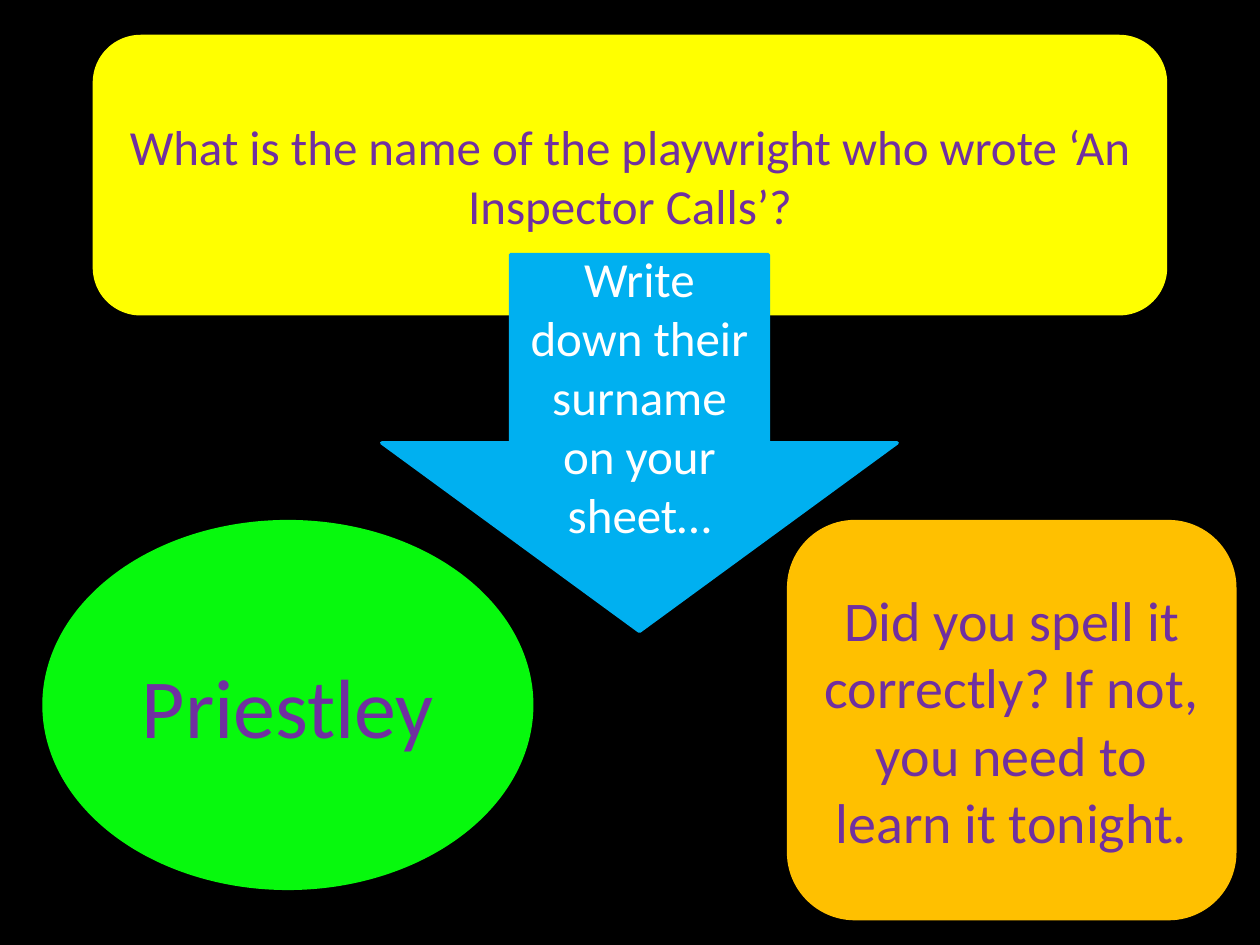
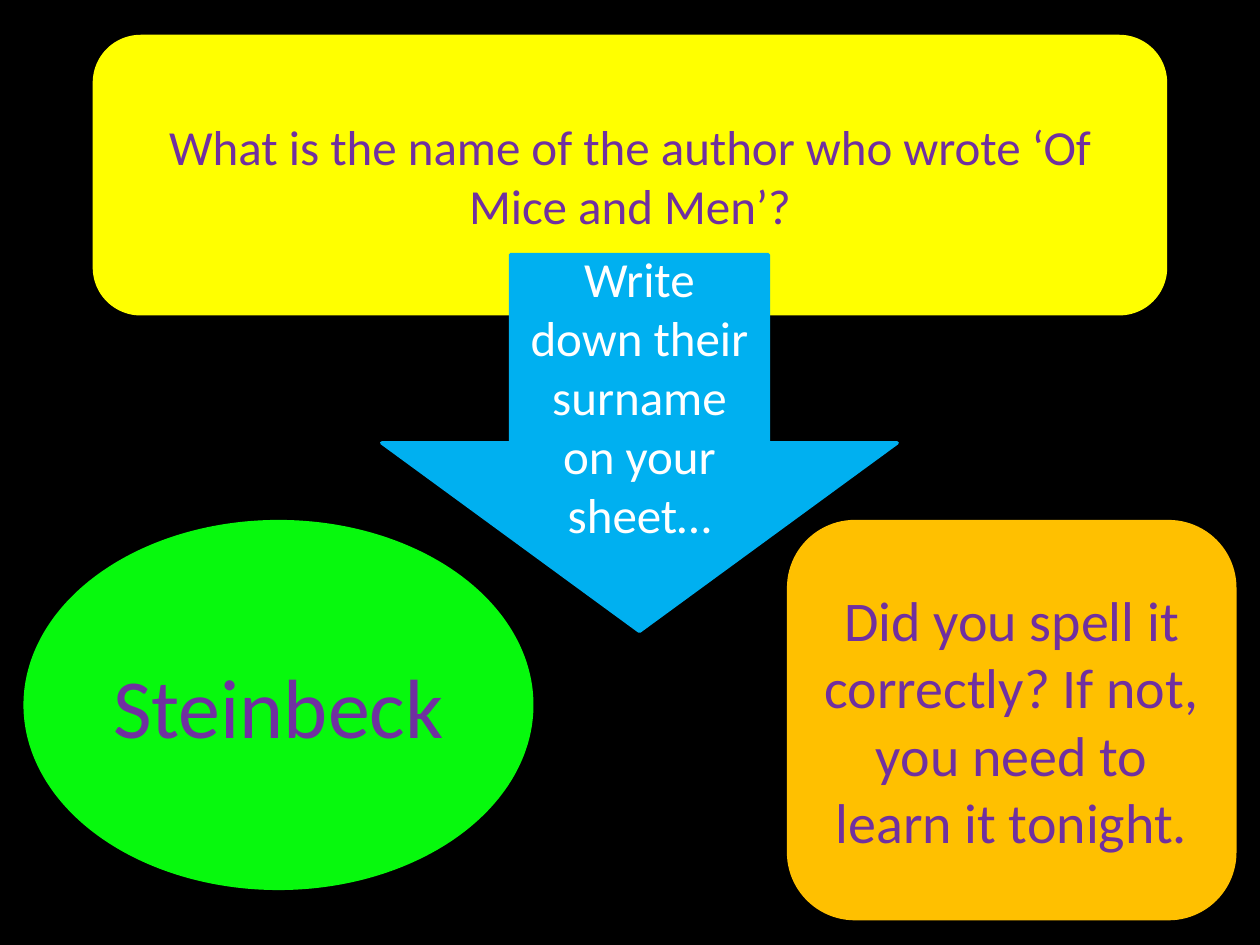
"""Build two author-surname quiz slides with a shared layout."""
from dataclasses import dataclass

from pptx import Presentation
from pptx import util as u
from pptx.dml.color import RGBColor
from pptx.enum import shapes, text

QUIZ = [
    {"question": "What is the name of the playwright who wrote ‘An Inspector Calls’?",
     "answer": "Priestley", "answer_left": 0.35},
    {"question": "What is the name of the author who wrote ‘Of Mice and Men’?",
     "answer": "Steinbeck", "answer_left": 0.2},
]
INSTRUCTION = "Write down their surname on your sheet…"
REMINDER = "Did you spell it correctly? If not, you need to learn it tonight."


@dataclass(frozen=True)
class Theme:
    font: str = "Calibri"
    background: str = "000000"
    question: str = "FFFF00"
    arrow: str = "00B0F0"
    answer: str = "07F90D"
    reminder: str = "FFC000"
    ink: str = "7030A0"
    light_ink: str = "FFFFFF"
    body_size: int = 28
    reminder_size: int = 32
    answer_size: int = 48
    outline: int = 2


THEME = Theme()
SHAPE = shapes.MSO_SHAPE
SLIDE_W, SLIDE_H = 10, 7.5
QUESTION_W = 8.5
LOWER_TOP = 4.14
ANSWER_RIGHT = 4.22


def add_panel(s, kind, box, color, words, size, ink=THEME.ink):
    sp = s.shapes.add_shape(kind, *(u.Inches(v) for v in box))
    sp.shadow.inherit = False
    sp.fill.solid()
    sp.fill.fore_color.rgb = RGBColor.from_string(color)
    sp.line.color.rgb = RGBColor.from_string(color)
    sp.line.width = u.Pt(THEME.outline)
    tf = sp.text_frame
    tf.word_wrap = True
    tf.vertical_anchor = text.MSO_ANCHOR.MIDDLE
    p = tf.paragraphs[0]
    p.alignment = text.PP_ALIGN.CENTER
    r = p.add_run()
    r.text = words
    r.font.name = THEME.font
    r.font.size = u.Pt(size)
    r.font.color.rgb = RGBColor.from_string(ink)


def add_quiz_slide(prs, item):
    s = prs.slides.add_slide(prs.slide_layouts[6])
    s.background.fill.solid()
    s.background.fill.fore_color.rgb = RGBColor.from_string(THEME.background)
    left = item["answer_left"]
    add_panel(s, SHAPE.ROUNDED_RECTANGLE,
              ((SLIDE_W - QUESTION_W) / 2, 0.29, QUESTION_W, 2.2),
              THEME.question, item["question"], THEME.body_size)
    add_panel(s, SHAPE.DOWN_ARROW, (3.03, 2.02, 4.09, 2.99),
              THEME.arrow, INSTRUCTION, THEME.body_size, THEME.light_ink)
    add_panel(s, SHAPE.OVAL, (left, LOWER_TOP, ANSWER_RIGHT - left, 2.91),
              THEME.answer, item["answer"], THEME.answer_size)
    add_panel(s, SHAPE.ROUNDED_RECTANGLE, (6.26, LOWER_TOP, 3.54, 3.15),
              THEME.reminder, REMINDER, THEME.reminder_size)


def main():
    prs = Presentation()
    prs.slide_width, prs.slide_height = u.Inches(SLIDE_W), u.Inches(SLIDE_H)
    for item in QUIZ:
        add_quiz_slide(prs, item)
    prs.save("out.pptx")


if __name__ == "__main__":
    main()
